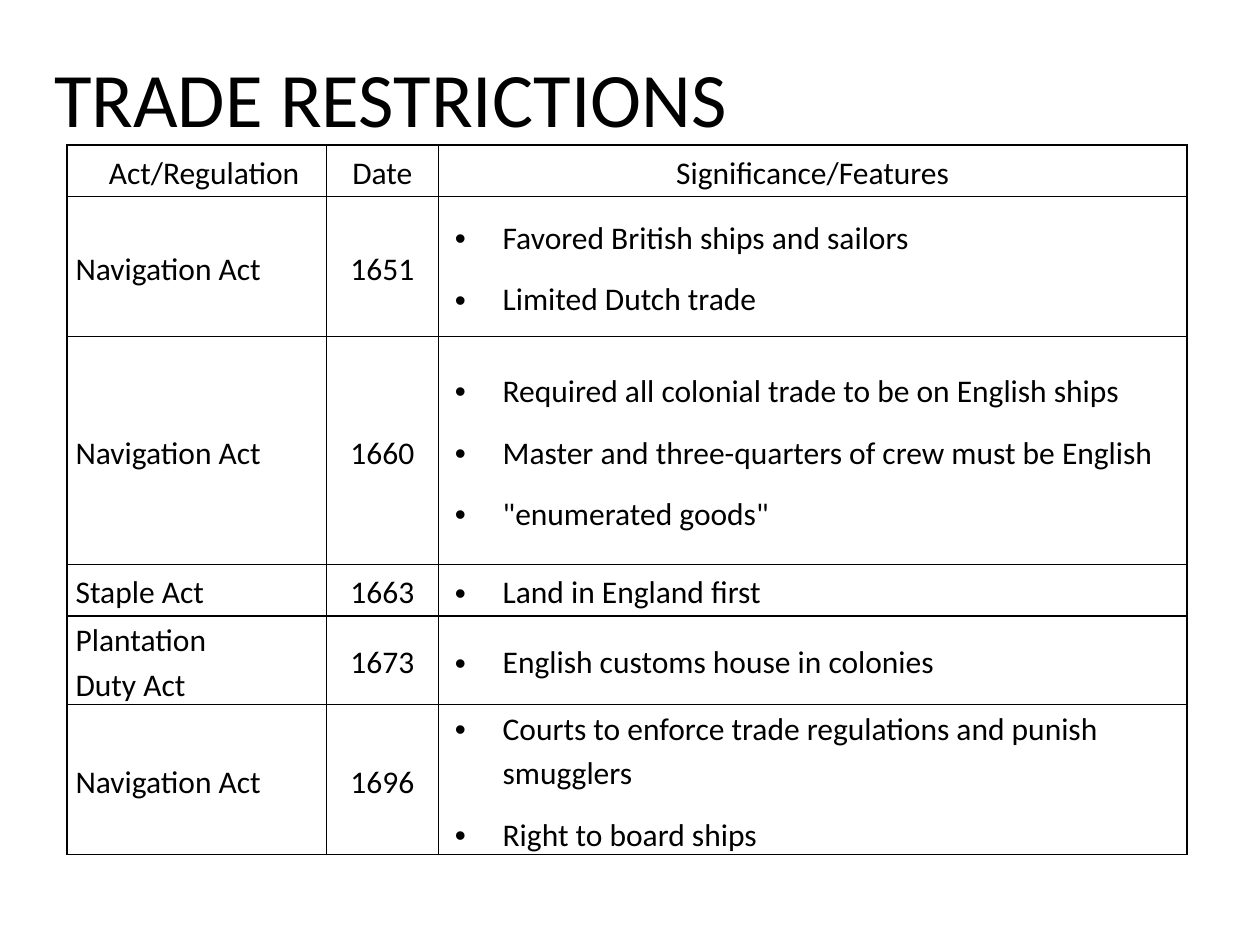
from lxml.etree import SubElement
from pptx import Presentation
from pptx.dml.color import RGBColor as Color
from pptx.enum.text import MSO_ANCHOR as Anchor, PP_ALIGN as Align
from pptx.oxml import parse_xml
from pptx.oxml.ns import nsdecls, qn
from pptx.util import Inches, Pt

COLORS = {"ink": "000000", "paper": "FFFFFF"}
FONT = "Calibri"
WIDTH, HEIGHT = Inches(10), Inches(7.5)
COLUMNS = [2.06, 0.89, 5.94]
ROW_HEIGHTS = [0.41, 1.11, 1.81, 0.41, 0.64, 1.11]
HEADINGS = ["Act/Regulation", "Date", "Significance/Features"]
ACTS = [
    (["Navigation Act"], "1651",
     ["Favored British ships and sailors", "Limited Dutch trade"]),
    (["Navigation Act"], "1660",
     ["Required all colonial trade to be on English ships",
      "Master and three-quarters of crew must be English",
      '"enumerated goods"']),
    (["Staple Act"], "1663", ["Land in England first"]),
    (["Plantation", "Duty Act"], "1673", ["English customs house in colonies"]),
    (["Navigation Act"], "1696",
     ["Courts to enforce trade regulations and punish smugglers",
      "Right to board ships"]),
]


def format_runs(paragraph, size):
    for run in paragraph.runs:
        run.font.size = Pt(size)
        run.font.name = FONT
        run.font.color.rgb = Color.from_string(COLORS["ink"])


def indent(paragraph, left, first=0):
    properties = paragraph._p.get_or_add_pPr()
    properties.set("marL", str(Inches(left)))
    properties.set("indent", str(Inches(first)))
    return properties


def add_bullet(paragraph):
    properties = indent(paragraph, 0.51, -0.38)
    SubElement(properties, qn("a:buFont"), typeface="Arial")
    SubElement(properties, qn("a:buChar"), char="•")
    tabs = SubElement(properties, qn("a:tabLst"))
    SubElement(tabs, qn("a:tab"), pos=str(Inches(0.5)), algn="l")
    paragraph.space_after = Pt(10)


def add_borders(cell):
    properties = cell._tc.get_or_add_tcPr()
    for position, side in enumerate("LRTB"):
        properties.insert(position, parse_xml(
            f'<a:ln{side} {nsdecls("a")} w="{Pt(1)}"><a:solidFill>'
            f'<a:srgbClr val="{COLORS["ink"]}"/></a:solidFill></a:ln{side}>'))


def fill_cell(cell, lines, style):
    cell.margin_left = cell.margin_right = cell.margin_top = cell.margin_bottom = 0
    cell.vertical_anchor = Anchor.MIDDLE
    cell.fill.solid()
    cell.fill.fore_color.rgb = Color.from_string(COLORS["paper"])
    add_borders(cell)
    cell.text_frame.text = "\n".join(lines)
    for paragraph in cell.text_frame.paragraphs:
        style(paragraph)
        paragraph.line_spacing = 1.15
        format_runs(paragraph, 18)


def style_name(paragraph):
    indent(paragraph, 0.07)


def style_centered(paragraph):
    paragraph.alignment = Align.CENTER


def style_first_heading(paragraph):
    indent(paragraph, 0.12)
    style_centered(paragraph)


def add_title(slide, text):
    title = slide.shapes.title
    title.left, title.top = Inches(0.33), Inches(0.3)
    title.width, title.height = Inches(8.38), Inches(1.03)
    title.text_frame.text = text
    title.text_frame.vertical_anchor = Anchor.MIDDLE
    paragraph = title.text_frame.paragraphs[0]
    paragraph.alignment = Align.LEFT
    paragraph.line_spacing = 0.9
    format_runs(paragraph, 44)


def add_acts_table(slide):
    table = slide.shapes.add_table(
        len(ROW_HEIGHTS), len(COLUMNS), Inches(0.53), Inches(1.15),
        Inches(sum(COLUMNS)), Inches(sum(ROW_HEIGHTS))).table
    table.first_row = table.horz_banding = False
    for column, width in zip(table.columns, COLUMNS):
        column.width = Inches(width)
    for row, height in zip(table.rows, ROW_HEIGHTS):
        row.height = Inches(height)
    heading_styles = [style_first_heading, style_centered, style_centered]
    for column, (heading, style) in enumerate(zip(HEADINGS, heading_styles)):
        fill_cell(table.cell(0, column), [heading], style)
    for row, (name, date, features) in enumerate(ACTS, start=1):
        fill_cell(table.cell(row, 0), name, style_name)
        fill_cell(table.cell(row, 1), [date], style_centered)
        fill_cell(table.cell(row, 2), features, add_bullet)


def main():
    presentation = Presentation()
    presentation.slide_width, presentation.slide_height = WIDTH, HEIGHT
    slide = presentation.slides.add_slide(presentation.slide_layouts[5])
    add_acts_table(slide)
    add_title(slide, "TRADE RESTRICTIONS")
    presentation.save("out.pptx")


if __name__ == "__main__":
    main()
